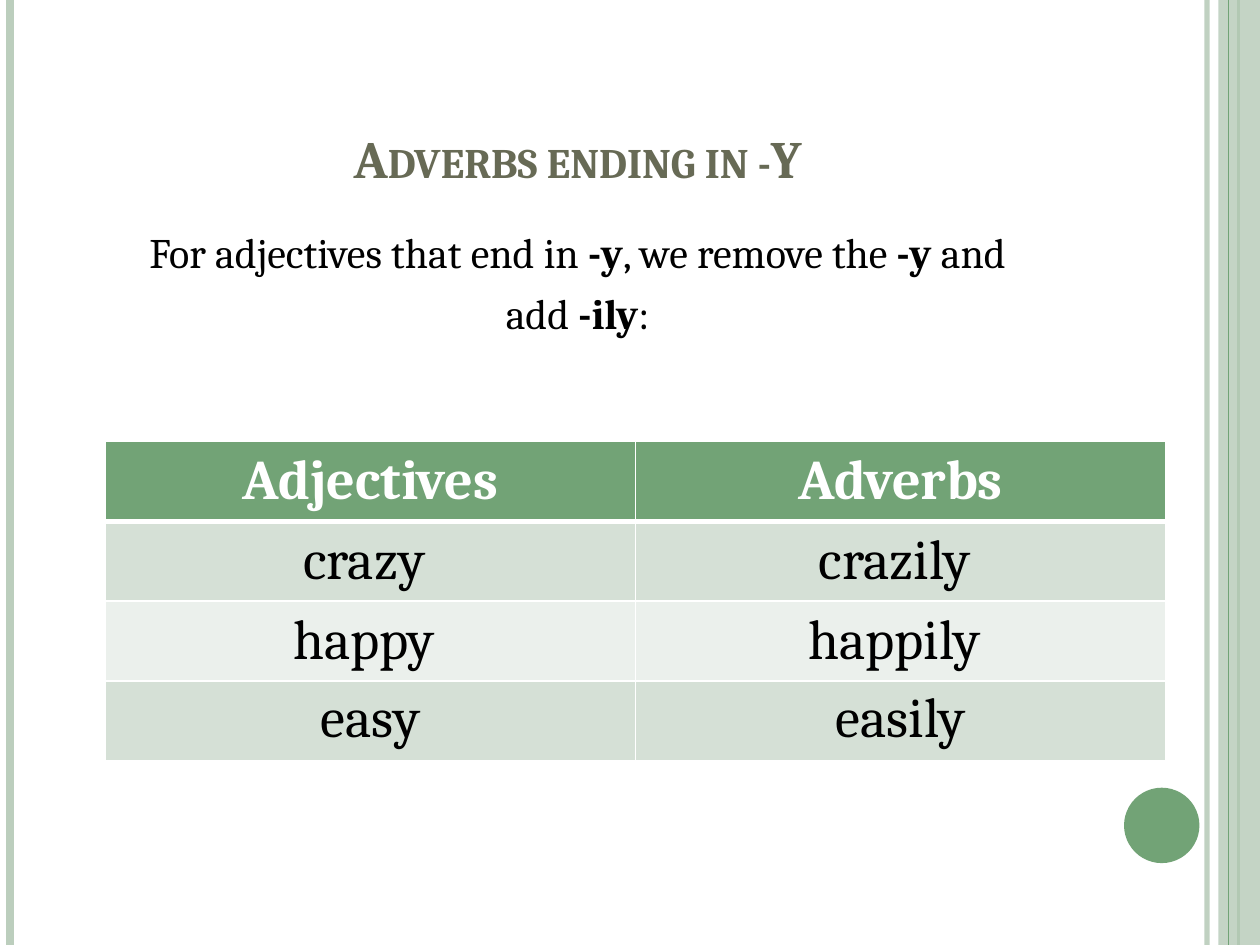
from lxml.etree import SubElement
from pptx import Presentation
from pptx.dml.color import RGBColor
from pptx.enum.shapes import MSO_CONNECTOR, MSO_SHAPE
from pptx.enum.text import MSO_ANCHOR, PP_ALIGN
from pptx.oxml import parse_xml
from pptx.oxml.ns import nsdecls, qn
from pptx.util import Cm, Pt


def paint(fmt, hue, alpha=None):
    """Solid colour for a fill, with optional opacity in percent."""
    fmt.solid()
    fmt.fore_color.rgb = RGBColor.from_string(hue)
    if alpha:
        tag = fmt.fore_color._xFill.find(qn("a:srgbClr"))
        SubElement(tag, qn("a:alpha")).set("val", str(alpha * 1000))


def style(par, size, hue, bold=None):
    par.alignment = PP_ALIGN.CENTER
    par.font.name = "Cambria"
    par.font.size = Pt(size)
    par.font.bold = bold
    paint(par.font.fill, hue)


GREEN, PALE = "72A376", "BCCEBD"
deck = Presentation()
deck.slide_width, deck.slide_height = Cm(25.4), Cm(19.05)
slide = deck.slides.add_slide(deck.slide_layouts[6])
shapes = slide.shapes

# Side stripes; the band lies above the first three lines
for x, hue, width, alpha in [
    (24.33, PALE, 3, 93),
    (0.2, PALE, 4.5, None),
    (24.97, GREEN, 1.5, None),
    (None, PALE, 0, 87),
    (24.77, GREEN, 0.75, None),
]:
    if x is None:
        band = shapes.add_shape(MSO_SHAPE.RECTANGLE, Cm(24.56), 0, Cm(0.84), Cm(19.05))
        band.shadow.inherit = False
        paint(band.fill, hue, alpha)
        band.line.fill.background()
        continue
    rule = shapes.add_connector(MSO_CONNECTOR.STRAIGHT, Cm(x), 0, Cm(x), Cm(19.05))
    paint(rule.line.fill, hue, alpha)
    rule.line.width = Pt(width)
    SubElement(rule._element.spPr, qn("a:effectLst"))

# Corner disc
disc = shapes.add_shape(MSO_SHAPE.OVAL, Cm(22.66), Cm(15.88), Cm(1.52), Cm(1.52))
disc.shadow.inherit = False
paint(disc.fill, GREEN)
disc.line.fill.background()

# Title
title = shapes.add_textbox(Cm(1.27), Cm(0.76), Cm(20.75), Cm(3.18)).text_frame
title.word_wrap = True
title.vertical_anchor = MSO_ANCHOR.BOTTOM
par = title.paragraphs[0]
run = par.add_run()
run.text = "Adverbs ending in -Y"
run.font._element.set("cap", "small")
style(par, 30, "676A55", True)

# Rule text: every second piece is bold
body = shapes.add_textbox(Cm(1.27), Cm(4.45), Cm(20.75), Cm(13.54)).text_frame
body.word_wrap = True
lines = [
    ["For adjectives that end in ", "-y", ", we remove the ", "-y", " and"],
    ["add ", "-ily", ":"],
]
for i, line in enumerate(lines):
    par = body.add_paragraph() if i else body.paragraphs[0]
    par.space_before = Pt(6)
    style(par, 24, "000000")
    for j, piece in enumerate(line):
        run = par.add_run()
        run.text = piece
        if j % 2:
            run.font.bold = True

# Word table
words = [
    ("Adjectives", "Adverbs"),
    ("crazy ", "crazily "),
    ("happy ", "happily "),
    ("easy", "easily"),
]
fills = [GREEN, "D5E0D6", "EBF0EC", "D5E0D6"]
table = shapes.add_table(4, 2, Cm(2.12), Cm(8.9), Cm(21.38), Cm(6.2)).table
for r, row in enumerate(words):
    for c, word in enumerate(row):
        cell = table.cell(r, c)
        cell.text = word
        cell.vertical_anchor = MSO_ANCHOR.MIDDLE if r < 3 else MSO_ANCHOR.TOP
        style(cell.text_frame.paragraphs[0], 32, "000000" if r else "FFFFFF", r == 0)
        # White borders, thick under the header
        props = cell._tc.get_or_add_tcPr()
        for side in ("L", "R", "T", "B"):
            thick = (r, side) in [(0, "B"), (1, "T")]
            props.append(parse_xml(
                f'<a:ln{side} {nsdecls("a")} w="{Pt(3 if thick else 1)}"><a:solidFill>'
                f'<a:srgbClr val="FFFFFF"/></a:solidFill></a:ln{side}>'
            ))
        paint(cell.fill, fills[r])

deck.save("out.pptx")
